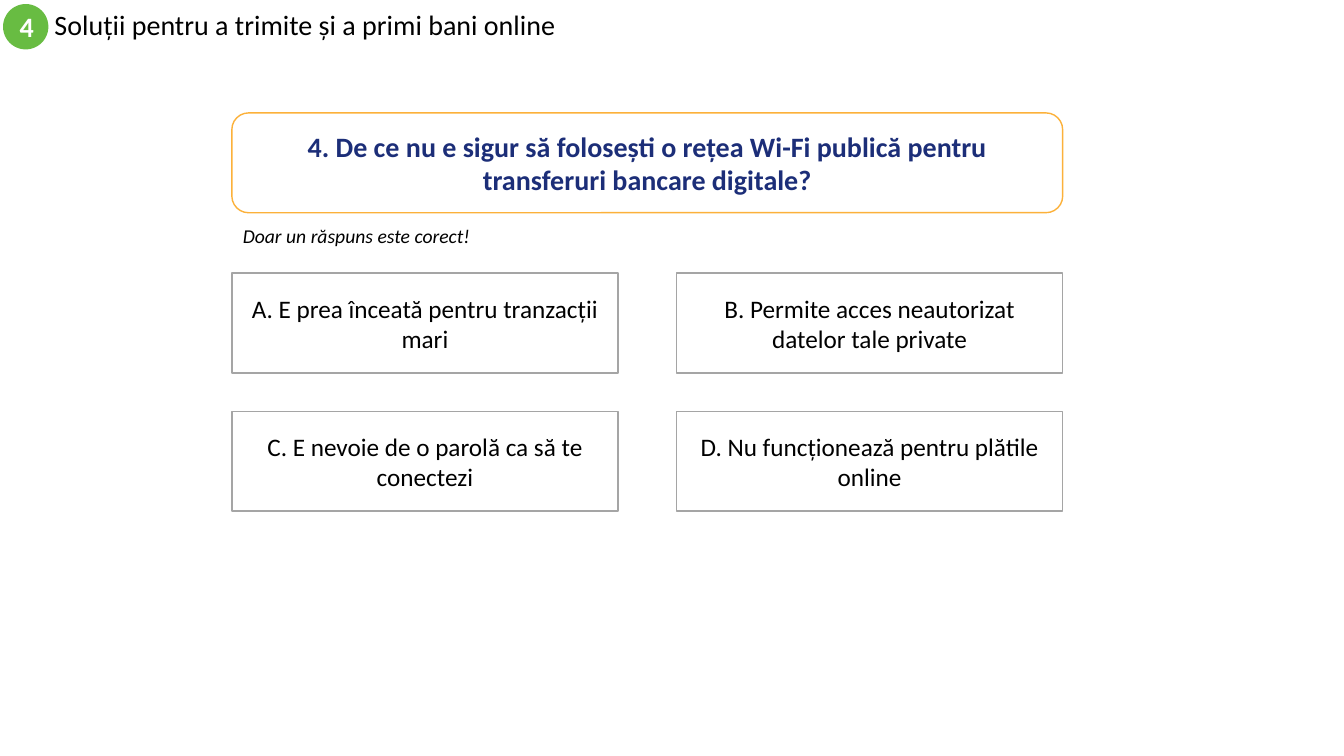
from dataclasses import dataclass

from pptx import Presentation
from pptx.dml.color import RGBColor
from pptx.enum.shapes import MSO_SHAPE
from pptx.enum.text import MSO_ANCHOR, MSO_AUTO_SIZE, PP_ALIGN
from pptx.util import Inches, Pt


@dataclass(frozen=True)
class Theme:
    font: str = "Calibri"
    white: str = "FFFFFF"
    black: str = "000000"
    green: str = "68BC42"
    orange: str = "FCB13A"
    navy: str = "1C2E78"
    gray: str = "A5A5A5"
    heading_size: int = 20
    answer_size: int = 18
    hint_size: int = 14
    line_width: int = 1


THEME = Theme()
ANSWERS = [
    "A. E prea înceată pentru tranzacții mari",
    "B. Permite acces neautorizat datelor tale private",
    "C. E nevoie de o parolă ca să te conectezi",
    "D. Nu funcționează pentru plătile online",
]


def write_text(shape, text, size, color, align=PP_ALIGN.CENTER,
               anchor=MSO_ANCHOR.MIDDLE, bold=False, italic=False):
    frame = shape.text_frame
    frame.word_wrap = True
    frame.auto_size = MSO_AUTO_SIZE.NONE
    frame.vertical_anchor = anchor
    paragraph = frame.paragraphs[0]
    paragraph.alignment = align
    run = paragraph.add_run()
    run.text = text
    run.font.name = THEME.font
    run.font.size = Pt(size)
    run.font.bold = bold
    run.font.italic = italic
    run.font.color.rgb = RGBColor.from_string(color)
    return paragraph


def add_panel(slide, kind, left, top, width, height, fill, line=None):
    shape = slide.shapes.add_shape(
        kind, Inches(left), Inches(top), Inches(width), Inches(height))
    shape.shadow.inherit = False
    shape.fill.solid()
    shape.fill.fore_color.rgb = RGBColor.from_string(fill)
    if line:
        shape.line.color.rgb = RGBColor.from_string(line)
        shape.line.width = Pt(THEME.line_width)
    else:
        shape.line.fill.background()
    return shape


def add_header(slide, left, top, width, height, number, text):
    badge = add_panel(slide, MSO_SHAPE.OVAL, left, top, height, height, THEME.green)
    write_text(badge, number, THEME.heading_size, THEME.white, bold=True)
    title = slide.shapes.title
    title.left, title.top = Inches(left + 0.41), Inches(top)
    title.width, title.height = Inches(width - 0.41), Inches(height)
    paragraph = write_text(title, text, THEME.heading_size, THEME.black, PP_ALIGN.LEFT)
    paragraph.line_spacing = 0.9


def add_question(slide, left, top, width, height, question, hint):
    panel = add_panel(slide, MSO_SHAPE.ROUNDED_RECTANGLE, left, top, width, height,
                      THEME.white, THEME.orange)
    write_text(panel, question, THEME.heading_size, THEME.navy, bold=True)
    hint_box = slide.shapes.add_textbox(
        Inches(left + 0.01), Inches(top + height + 0.06), Inches(2.74), Inches(0.34))
    write_text(hint_box, hint, THEME.hint_size, THEME.black, PP_ALIGN.LEFT,
               MSO_ANCHOR.TOP, italic=True)


def add_answers(slide, left, top, width, height, answers):
    column_gap, row_gap = 0.58, 0.38
    cell_width = (width - column_gap) / 2
    cell_height = (height - row_gap) / 2
    for index, answer in enumerate(answers):
        row, column = divmod(index, 2)
        panel = add_panel(slide, MSO_SHAPE.RECTANGLE,
                          left + column * (cell_width + column_gap),
                          top + row * (cell_height + row_gap),
                          cell_width, cell_height, THEME.white, THEME.gray)
        write_text(panel, answer, THEME.answer_size, THEME.black)


def main():
    presentation = Presentation()
    presentation.slide_width = Inches(13.33)
    presentation.slide_height = Inches(7.5)
    slide = presentation.slides.add_slide(presentation.slide_layouts[5])
    add_header(slide, 0.03, 0.04, 8.41, 0.45, "4",
               "Soluții pentru a trimite și a primi bani online")
    add_question(slide, 2.3, 1.12, 8.24, 0.99,
                 "4. De ce nu e sigur să folosești o rețea Wi-Fi publică "
                 "pentru transferuri bancare digitale?",
                 "Doar un răspuns este corect!")
    add_answers(slide, 2.3, 2.71, 8.24, 2.36, ANSWERS)
    presentation.save("out.pptx")


if __name__ == "__main__":
    main()
